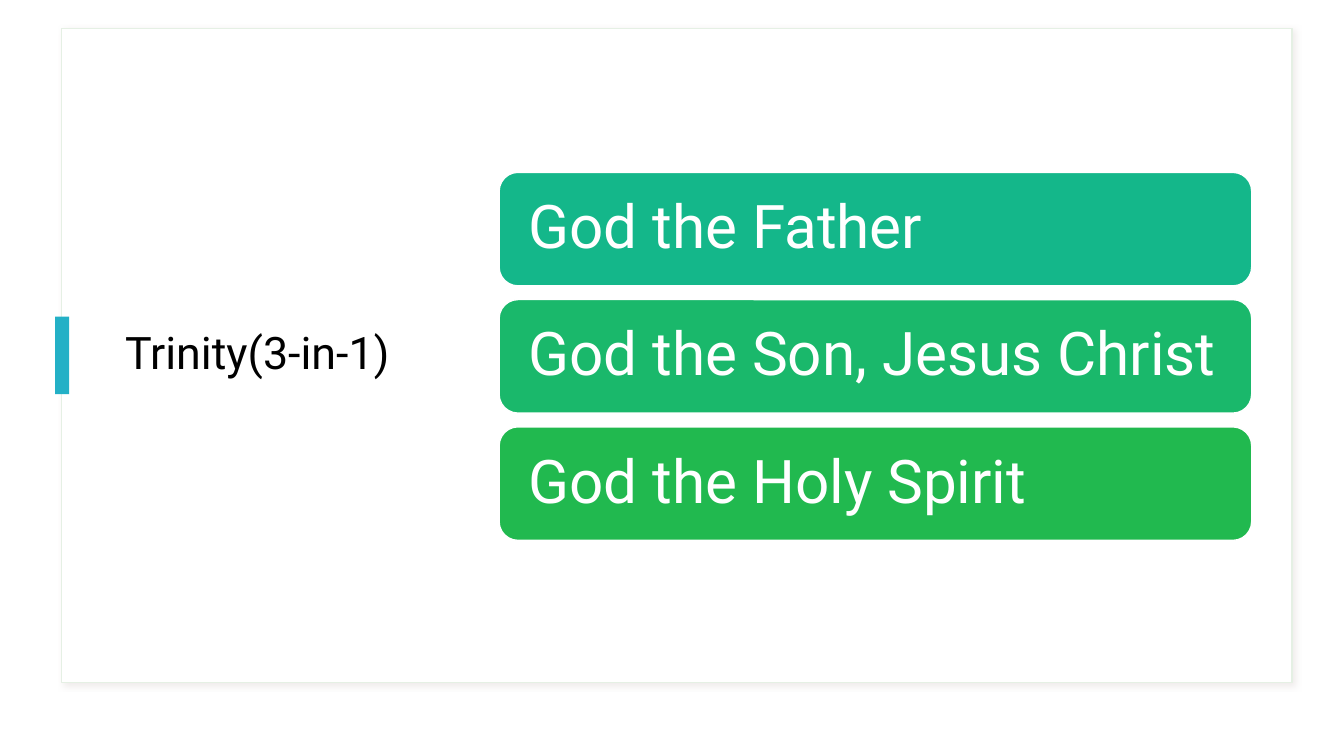
from lxml.etree import SubElement as Sub
from pptx import Presentation as Deck
from pptx.dml.color import RGBColor as RGB
from pptx.enum.shapes import MSO_SHAPE as Kind
from pptx.enum.text import MSO_ANCHOR as Anchor, MSO_AUTO_SIZE as Fit, PP_ALIGN as Align
from pptx.oxml.ns import qn
from pptx.util import Pt


def hue(code):
    return RGB.from_string(code)


def write(frame, text, size=32, color="000000", font="Roboto", inset=None):
    frame.word_wrap = True
    frame.auto_size = Fit.NONE
    frame.vertical_anchor = Anchor.MIDDLE
    if inset is not None:
        frame.margin_left = frame.margin_right = Pt(inset)
        frame.margin_top = frame.margin_bottom = Pt(inset)
    para = frame.paragraphs[0]
    para.alignment = Align.LEFT
    para.line_spacing = 0.9
    run = para.add_run()
    run.text = text
    run.font.name = font
    run.font.size = Pt(size)
    run.font.color.rgb = hue(color)


class Page:
    """Holds the style and the current slide."""

    def __init__(self, deck):
        self.slide = deck.slides.add_slide(deck.slide_layouts[5])
        self.head = self.slide.shapes.title

    def title(self, text, x, y, w, h):
        head = self.head
        head.left, head.top, head.width, head.height = map(Pt, (x, y, w, h))
        write(head.text_frame, text)

    def box(self, x, y, w, h, fill, line=None, kind=Kind.RECTANGLE):
        shape = self.slide.shapes.add_shape(kind, *map(Pt, (x, y, w, h)))
        shape.shadow.inherit = False
        shape.fill.solid()
        shape.fill.fore_color.rgb = hue(fill)
        if line:
            shape.line.color.rgb = hue(line)
            shape.line.width = Pt(1)
        else:
            shape.line.fill.background()
        return shape

    def panel(self, x, y, w, h):
        shape = self.box(x, y, w, h, "FFFFFF", "E5F0E4")
        glow = shape.element.spPr.find(qn("a:effectLst"))
        shade = Sub(glow, qn("a:outerShdw"), blurRad=str(Pt(4)),
                    dist=str(Pt(3)), dir="2700000", rotWithShape="0")
        tint = Sub(shade, qn("a:srgbClr"), val="CABEBC")
        Sub(tint, qn("a:alpha"), val="30000")
        self.head.element.addprevious(shape.element)

    def card(self, text, x, y, w, h, fill):
        shape = self.box(x, y, w, h, fill, "FFFFFF", Kind.ROUNDED_RECTANGLE)
        write(shape.text_frame, text, size=43, color="FFFFFF", inset=17)


def main():
    deck = Deck()
    deck.slide_width, deck.slide_height = Pt(960), Pt(540)
    page = Page(deck)
    page.panel(44, 20.2, 879, 467.3)
    page.title("Trinity(3-in-1)", 82.1, 39.6, 235.4, 428.4)
    page.box(39.4, 226.2, 10, 55.4, "23B0C6")
    cards = [("God the Father", "14B78A"),
             ("God the Son, Jesus Christ", "1AB86B"),
             ("God the Holy Spirit", "21B94F")]
    for row, (text, fill) in enumerate(cards):
        page.card(text, 356.5, 123.1 + row * 90.9, 537.6, 81.1, fill)
    deck.save("out.pptx")


if __name__ == "__main__":
    main()
